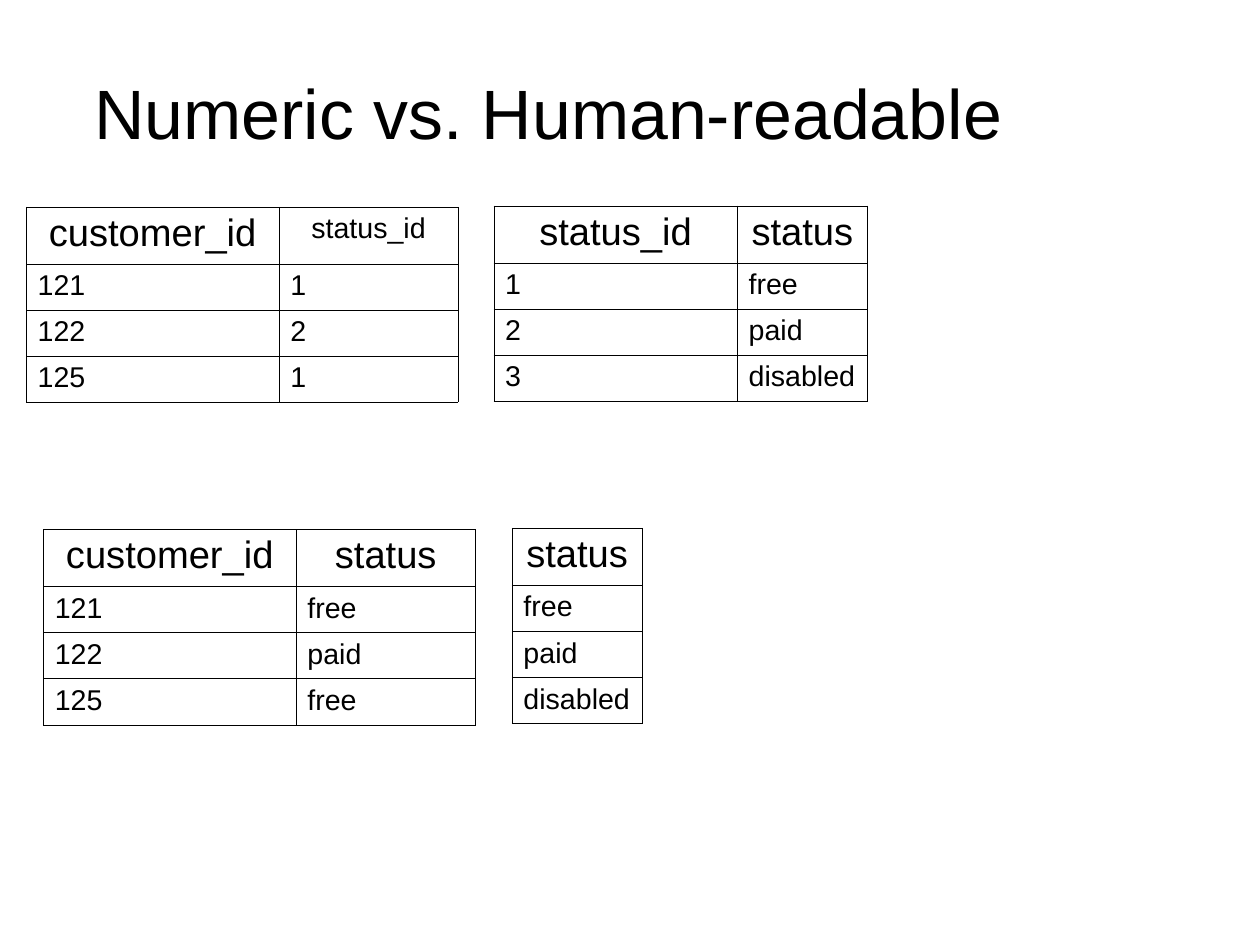
"""Build the slide comparing numeric and human-readable status tables."""
from pptx import Presentation
from pptx.dml.color import RGBColor
from pptx.enum.text import MSO_ANCHOR, PP_ALIGN
from pptx.oxml import parse_xml
from pptx.oxml.ns import nsdecls
from pptx.util import Inches, Pt


def style_paragraph(paragraph, size, alignment, color="000000"):
    paragraph.alignment = alignment
    paragraph.line_spacing = 0.93
    paragraph.font.name = "Arial"
    paragraph.font.size = Pt(size)
    paragraph.font.bold = False
    paragraph.font.color.rgb = RGBColor.from_string(color)


def draw_borders(cell, color="000000"):
    for position, side in enumerate(("lnL", "lnR", "lnT", "lnB")):
        border = parse_xml(
            f'<a:{side} {nsdecls("a")} w="{Pt(0.06)}"><a:solidFill>'
            f'<a:srgbClr val="{color}"/></a:solidFill></a:{side}>'
        )
        cell._tc.get_or_add_tcPr().insert(position, border)


cm_per_inch = 2.54
presentation = Presentation()
presentation.slide_width = Inches(28 / cm_per_inch)
presentation.slide_height = Inches(21 / cm_per_inch)
slide = presentation.slides.add_slide(presentation.slide_layouts[5])

title = slide.shapes.title
title.left, title.top = Inches(-0.16), Inches(0.33)
title.width, title.height = Inches(9.92), Inches(1.38)
heading = title.text_frame
heading.text = "Numeric vs. Human-readable"
heading.vertical_anchor = MSO_ANCHOR.MIDDLE
heading.margin_left = heading.margin_right = 0
heading.margin_top = heading.margin_bottom = 0
style_paragraph(heading.paragraphs[0], 44, PP_ALIGN.CENTER)

relation_height = 1.71
header_height = 0.5
customers_numeric = [("customer_id", "status_id"), ("121", "1"), ("122", "2"), ("125", "1")]
status_lookup = [("status_id", "status"), ("1", "free"), ("2", "paid"), ("3", "disabled")]
customers_readable = [("customer_id", "status"), ("121", "free"), ("122", "paid"), ("125", "free")]
status_list = [(status,) for _, status in status_lookup]

relations = [
    (0.23, 1.81, [2.21, 1.57], [24, 18], customers_numeric),
    (4.32, 1.8, [2.13, 1.14], [24, 24], status_lookup),
    (0.38, 4.63, [2.21, 1.57], [24, 24], customers_readable),
    (4.48, 4.62, [1.14], [24], status_list),
]

for left, top, column_widths, header_sizes, records in relations:
    relation = slide.shapes.add_table(
        len(records), len(column_widths), Inches(left), Inches(top),
        Inches(sum(column_widths)), Inches(relation_height),
    ).table
    relation.horz_banding = False
    relation.first_row = False
    record_height = (relation_height - header_height) / (len(records) - 1)
    for column, width in zip(relation.columns, column_widths):
        column.width = Inches(width)
    for row_index, record in enumerate(records):
        is_header = row_index == 0
        relation.rows[row_index].height = Inches(header_height if is_header else record_height)
        for column_index, value in enumerate(record):
            cell = relation.cell(row_index, column_index)
            cell.text = value
            cell.margin_left = cell.margin_right = Inches(0.1)
            cell.margin_top, cell.margin_bottom = Inches(0.07), Inches(0.05)
            cell.fill.background()
            draw_borders(cell)
            style_paragraph(
                cell.text_frame.paragraphs[0],
                header_sizes[column_index] if is_header else 18,
                PP_ALIGN.CENTER if is_header else PP_ALIGN.LEFT,
            )

presentation.save("out.pptx")
